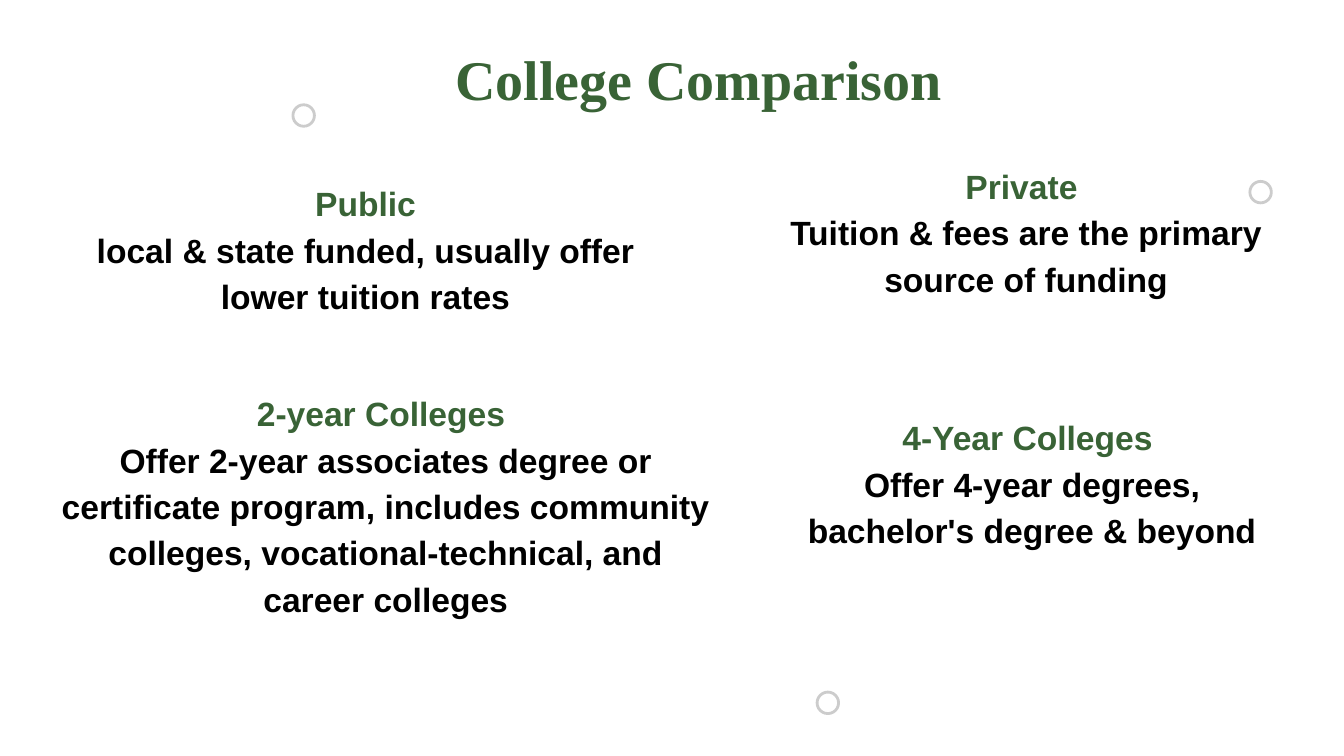
from typing import NamedTuple

from pptx import Presentation
from pptx.dml.color import RGBColor
from pptx.enum import shapes as kinds, text as t
from pptx.util import Inches, Pt

GREEN = RGBColor(0x39, 0x63, 0x36)
BLACK = RGBColor(0, 0, 0)
GREY = RGBColor(0xCC, 0xCC, 0xCC)
MARGIN = Inches(0.1)
RING_SIZE = Inches(0.16)


class College(NamedTuple):
    heading: str
    description: str
    left: float
    top: float
    width: float
    height: float


class Ring(NamedTuple):
    left: float
    top: float


# The space after some headings shifts their centring slightly
COLLEGES = [
    College("Public", "local & state funded, usually offer lower tuition rates",
            0.44, 1.22, 4.56, 1.2),
    College("Private ", "Tuition & fees are the primary source of funding",
            5.71, 1.09, 3.85, 1.2),
    College("2-year Colleges ",
            "Offer 2-year associates degree or certificate program, includes "
            "community colleges, vocational-technical, and career colleges",
            0.35, 2.78, 5.04, 1.55),
    College("4-Year Colleges ", "Offer 4-year degrees, bachelor's degree & beyond",
            5.71, 2.96, 3.94, 1.2),
]
RINGS = [Ring(6.08, 5.15), Ring(2.18, 0.78), Ring(9.3, 1.35)]


def set_frame(frame, auto_size: t.MSO_AUTO_SIZE) -> None:
    frame.word_wrap = True
    frame.auto_size = auto_size
    frame.vertical_anchor = t.MSO_ANCHOR.TOP
    frame.margin_left = frame.margin_right = MARGIN
    frame.margin_top = frame.margin_bottom = MARGIN


def write(paragraph, words: str, font: str, size: int, color: RGBColor) -> None:
    paragraph.text = words
    paragraph.alignment = t.PP_ALIGN.CENTER
    paragraph.font.name = font
    paragraph.font.size = Pt(size)
    paragraph.font.bold = True
    paragraph.font.color.rgb = color


def draw_ring(slide, ring: Ring) -> None:
    circle = slide.shapes.add_shape(
        kinds.MSO_SHAPE.OVAL, Inches(ring.left), Inches(ring.top), RING_SIZE, RING_SIZE)
    circle.shadow.inherit = False
    circle.fill.background()
    circle.line.color.rgb = GREY
    circle.line.width = Pt(1.5)


def draw_college(slide, college: College) -> None:
    frame = slide.shapes.add_textbox(
        Inches(college.left), Inches(college.top),
        Inches(college.width), Inches(college.height)).text_frame
    set_frame(frame, t.MSO_AUTO_SIZE.SHAPE_TO_FIT_TEXT)
    heading, description = frame.paragraphs[0], frame.add_paragraph()
    write(heading, college.heading, "Arial", 18, GREEN)
    write(description, college.description, "Arial", 18, BLACK)
    heading.line_spacing = description.line_spacing = 1.15


def main() -> None:
    # Widescreen 16:9 deck
    deck = Presentation()
    deck.slide_width = Inches(10)
    deck.slide_height = Inches(10 * 9 / 16)
    slide = deck.slides.add_slide(deck.slide_layouts.get_by_name("Title Only"))

    # Title
    title = slide.shapes.title
    title.left, title.top = Inches(0.44), Inches(0.23)
    title.width, title.height = Inches(9.52), Inches(0.79)
    set_frame(title.text_frame, t.MSO_AUTO_SIZE.NONE)
    write(title.text_frame.paragraphs[0], "College Comparison",
          "Times New Roman", 30, GREEN)

    # Decorative rings, then the four college types
    for ring in RINGS:
        draw_ring(slide, ring)
    for college in COLLEGES:
        draw_college(slide, college)

    deck.save("out.pptx")


if __name__ == "__main__":
    main()
